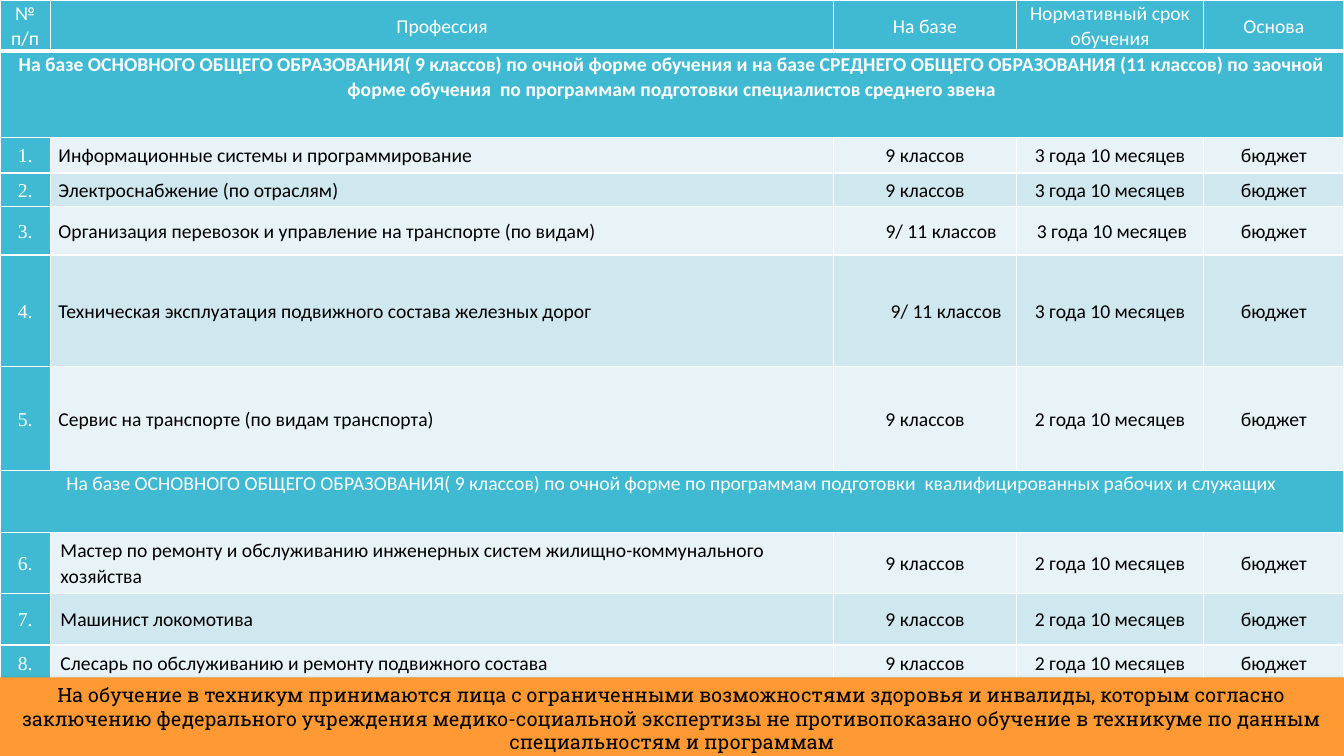
import pptx
import pptx.dml.color
import pptx.enum.shapes
import pptx.enum.text
import pptx.oxml
import pptx.oxml.ns
import pptx.util
from pptx.util import Inches

COLORS = {
    "teal": "40BAD2",
    "light": "E8F3F7",
    "blue": "CFE7EE",
    "orange": "FF9933",
    "white": "FFFFFF",
    "black": "000000",
}
ALIGN = pptx.enum.text.PP_ALIGN
ANCHOR = pptx.enum.text.MSO_ANCHOR

COLUMN_WIDTHS = [0.5, 7.77, 1.81, 1.86, 1.39]
HEADINGS = ["№ п/п", "Профессия", "На базе", "Нормативный срок обучения", "Основа"]
HEADER_HEIGHT = 0.5

# Each section: heading, heading height, bold, side inset, top inset, programmes.
# Each programme: name, school base, duration, row height, base inset, duration inset.
SECTIONS = [
    ("На базе ОСНОВНОГО ОБЩЕГО ОБРАЗОВАНИЯ( 9 классов) по очной форме обучения и на базе "
     "СРЕДНЕГО ОБЩЕГО ОБРАЗОВАНИЯ (11 классов) по заочной форме обучения  по программам "
     "подготовки специалистов среднего звена", 0.86, True, 0.08, 0.04, [
         ("Информационные системы и программирование",
          "9 классов", "3 года 10 месяцев", 0.35, 0, 0),
         ("Электроснабжение (по отраслям)",
          "9 классов", "3 года 10 месяцев", 0.33, 0, 0),
         ("Организация перевозок и управление на транспорте (по видам)",
          "9/ 11 классов", "3 года 10 месяцев", 0.48, 0.32, 0.04),
         ("Техническая эксплуатация подвижного состава железных дорог",
          "9/ 11 классов", "3 года 10 месяцев", 1.11, 0.42, 0),
         ("Сервис на транспорте (по видам транспорта)",
          "9 классов", "2 года 10 месяцев", 1.03, 0, 0),
     ]),
    ("На базе ОСНОВНОГО ОБЩЕГО ОБРАЗОВАНИЯ( 9 классов) по очной форме по программам "
     "подготовки  квалифицированных рабочих и служащих", 0.61, False, 0.1, 0.05, [
         ("Мастер по ремонту и обслуживанию инженерных систем жилищно-коммунального хозяйства",
          "9 классов", "2 года 10 месяцев", 0.61, 0, 0),
         ("Машинист локомотива",
          "9 классов", "2 года 10 месяцев", 0.51, 0, 0),
         ("Слесарь по обслуживанию и ремонту подвижного состава",
          "9 классов", "2 года 10 месяцев", 0.35, 0, 0),
     ]),
]
NOTICE = (
    "На обучение в техникум принимаются лица с ограниченными возможностями здоровья и "
    "инвалиды, которым согласно заключению федерального учреждения медико-социальной "
    "экспертизы не противопоказано обучение в техникуме по данным специальностям и программам"
)


def color(name):
    return pptx.dml.color.RGBColor.from_string(COLORS[name])


def write_text(frame, text, font="Calibri", size=14, ink="black", bold=False,
               align=ALIGN.CENTER, spacing=1.07):
    para = frame.paragraphs[0]
    para.alignment = align
    para.line_spacing = spacing
    span = para.add_run()
    span.text = text
    span.font.name = font
    span.font.size = pptx.util.Pt(size)
    span.font.bold = bold
    span.font.color.rgb = color(ink)


def add_borders(cell, bottom=1):
    properties = cell._tc.get_or_add_tcPr()
    for side, width in (("L", 1), ("R", 1), ("T", 1), ("B", bottom)):
        properties.append(pptx.oxml.parse_xml(
            f'<a:ln{side} {pptx.oxml.ns.nsdecls("a")} w="{pptx.util.Pt(width)}">'
            f'<a:solidFill><a:srgbClr val="{COLORS["white"]}"/></a:solidFill></a:ln{side}>'))


def fill_cell(cell, text, fill, insets=(0, 0, 0, 0), anchor=ANCHOR.MIDDLE, bottom=1, **style):
    add_borders(cell, bottom)
    cell.fill.solid()
    cell.fill.fore_color.rgb = color(fill)
    cell.margin_left, cell.margin_top, cell.margin_right, cell.margin_bottom = map(Inches, insets)
    cell.vertical_anchor = anchor
    write_text(cell.text_frame, text, **style)


def add_programme_table(page, left, top, width):
    heights = [HEADER_HEIGHT]
    for _, heading_height, _, _, _, programmes in SECTIONS:
        heights += [heading_height] + [programme[3] for programme in programmes]
    table = page.shapes.add_table(
        len(heights), len(COLUMN_WIDTHS), Inches(left), Inches(top),
        Inches(width), Inches(sum(heights))).table
    table.horz_banding = False
    for column, column_width in zip(table.columns, COLUMN_WIDTHS):
        column.width = Inches(column_width)
    for row, height in zip(table.rows, heights):
        row.height = Inches(height)

    # Column headings
    for column, heading in enumerate(HEADINGS):
        fill_cell(table.cell(0, column), heading, "teal", ink="white", bottom=3)

    # Sections with their numbered programmes
    row, number = 1, 1
    for heading, _, bold, side, edge, programmes in SECTIONS:
        section = table.cell(row, 0)
        section.merge(table.cell(row, len(COLUMN_WIDTHS) - 1))
        fill_cell(section, heading, "teal", anchor=ANCHOR.TOP, ink="white", bold=bold)
        row += 1
        for index, (name, base, duration, _, base_inset, duration_inset) in enumerate(programmes):
            band = "blue" if index % 2 else "light"
            fill_cell(table.cell(row, 0), f"{number}.", "teal",
                      font="Times New Roman", ink="white")
            fill_cell(table.cell(row, 1), name, band,
                      insets=(side, edge, side, edge), align=ALIGN.LEFT)
            fill_cell(table.cell(row, 2), base, band, insets=(base_inset, 0, 0, 0))
            fill_cell(table.cell(row, 3), duration, band, insets=(duration_inset, 0, 0, 0))
            fill_cell(table.cell(row, 4), "бюджет", band)
            row += 1
            number += 1


def add_notice(page, left, top, width, height):
    banner = page.shapes.add_shape(
        pptx.enum.shapes.MSO_SHAPE.RECTANGLE,
        Inches(left), Inches(top), Inches(width), Inches(height))
    banner.fill.solid()
    banner.fill.fore_color.rgb = color("orange")
    banner.line.fill.background()

    # Soft shadow straight below
    banner.shadow.inherit = False
    effects = banner._element.spPr.find(pptx.oxml.ns.qn("a:effectLst"))
    effects.append(pptx.oxml.parse_xml(
        f'<a:outerShdw {pptx.oxml.ns.nsdecls("a")} blurRad="{pptx.util.Pt(3.5)}" '
        f'dist="{pptx.util.Pt(1.1)}" dir="5400000" rotWithShape="0">'
        f'<a:srgbClr val="{COLORS["black"]}"><a:alpha val="45000"/></a:srgbClr></a:outerShdw>'))

    frame = banner.text_frame
    frame.word_wrap = True
    frame.auto_size = pptx.enum.text.MSO_AUTO_SIZE.SHAPE_TO_FIT_TEXT
    frame.vertical_anchor = ANCHOR.MIDDLE
    write_text(frame, NOTICE, font="Roboto Slab", spacing=1.0)


def main():
    deck = pptx.Presentation()
    deck.slide_width, deck.slide_height = Inches(13.33), Inches(7.5)
    page = deck.slides.add_slide(deck.slide_layouts[6])
    add_programme_table(page, 0, 0, 13.33)
    add_notice(page, 0, 6.72, 13.33, 0.81)
    deck.save("out.pptx")


if __name__ == "__main__":
    main()
